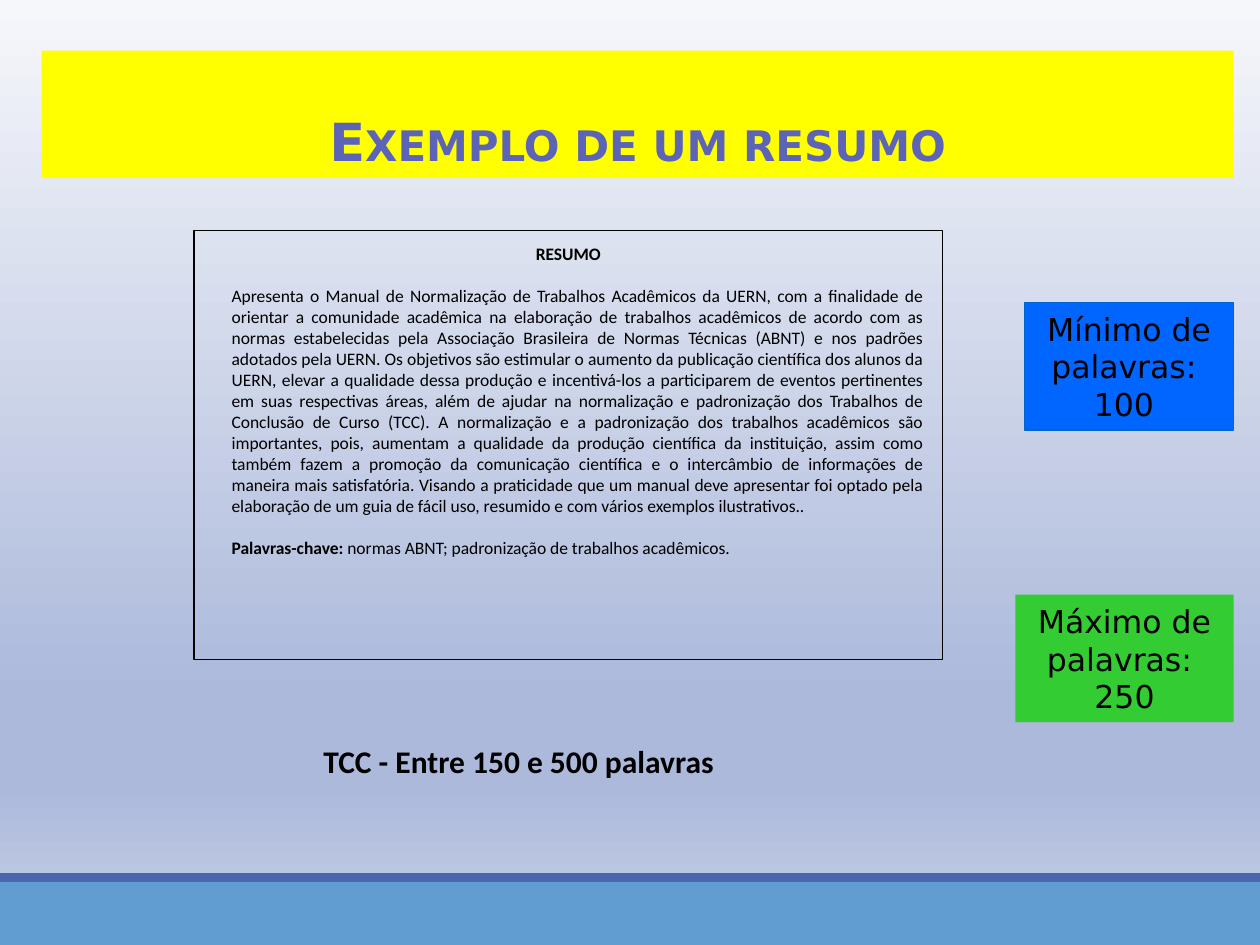
import copy
import pptx
import pptx.util
import pptx.dml.color
import pptx.enum.shapes
import pptx.enum.text

Cm = pptx.util.Cm
Pt = pptx.util.Pt
RGB = pptx.dml.color.RGBColor
ALIGN = pptx.enum.text.PP_ALIGN
ANCHOR = pptx.enum.text.MSO_ANCHOR

BLACK = RGB(0x00, 0x00, 0x00)
PURPLE = RGB(0x5C, 0x64, 0xB7)
YELLOW = RGB(0xFF, 0xFF, 0x00)
BLUE = RGB(0x00, 0x66, 0xFF)
EDGE = RGB(0x00, 0x66, 0xCC)
GREEN = RGB(0x33, 0xCC, 0x33)
SKY = RGB(0x62, 0x9D, 0xD1)
NAVY = RGB(0x4A, 0x66, 0xAC)
SHADES = [
    (0, RGB(0xF6, 0xF7, 0xFB)),
    (0.74, RGB(0xAC, 0xB9, 0xDB)),
    (0.83, RGB(0xAC, 0xB9, 0xDB)),
    (1, RGB(0xC8, 0xD1, 0xE7)),
]
SANS = "DejaVu Sans"
BODY = "Calibri"

TITLE = "Exemplo de um resumo"
HEAD = "RESUMO"
TEXT = [
    "Apresenta o Manual de Normalização de Trabalhos Acadêmicos da UERN, "
    "com a finalidade de orientar a comunidade acadêmica na elaboração de "
    "trabalhos acadêmicos de acordo com as normas estabelecidas pela "
    "Associação Brasileira de Normas Técnicas (ABNT) e nos padrões adotados "
    "pela UERN.",
    "Os objetivos são estimular o aumento da publicação científica "
    "dos alunos da UERN, elevar a qualidade dessa produção e incentivá-los a "
    "participarem de eventos pertinentes em suas respectivas áreas, além de "
    "ajudar na normalização e padronização dos Trabalhos de Conclusão de Curso "
    "(TCC).",
    "A normalização e a padronização dos trabalhos acadêmicos são "
    "importantes, pois, aumentam a qualidade da produção científica da "
    "instituição, assim como também fazem a promoção da comunicação científica "
    "e o intercâmbio de informações de maneira mais satisfatória.",
    "Visando a praticidade que um manual deve apresentar foi optado pela "
    "elaboração de um guia de fácil uso, resumido e com vários exemplos "
    "ilustrativos..",
]
KEYS = [("Palavras-chave: ", True),
        ("normas ABNT; padronização de trabalhos acadêmicos.", False)]
NOTE = "TCC - Entre 150 e 500 palavras"
LIMITS = [
    (["Mínimo de palavras: ", "100 "], 6.1, 4.22, BLUE, EDGE),
    (["Máximo de palavras: ", "250"], 11.99, 4.4, GREEN, None),
]
BARS = [(17.78, 1.27, SKY), (17.6, 0.18, NAVY)]
WIDTH, HEIGHT = 25.4, 19.05
RIGHT = 24.87


def place(shape, left, top, width, height):
    shape.left, shape.top = Cm(left), Cm(top)
    shape.width, shape.height = Cm(width), Cm(height)


def box(slide, left, top, width, height, fill=None, line=None):
    shape = slide.shapes.add_shape(
        pptx.enum.shapes.MSO_SHAPE.RECTANGLE,
        Cm(left), Cm(top), Cm(width), Cm(height))
    shape.shadow.inherit = False
    if fill is None:
        shape.fill.background()
    else:
        shape.fill.solid()
        shape.fill.fore_color.rgb = fill
    if line is None:
        shape.line.fill.background()
    else:
        shape.line.color.rgb = line
        shape.line.width = Pt(0.75)
    return shape


def write(para, text, size=18, font=BODY, color=BLACK, bold=False,
          align=ALIGN.LEFT, after=0, left=0, right=0, small=False):
    para.alignment = align
    para.space_after = Pt(after)
    props = para._p.get_or_add_pPr()
    props.set("marL", str(Cm(left)))
    props.set("marR", str(Cm(right)))
    run = para.add_run()
    run.text = text
    run.font.size = Pt(size)
    run.font.name = font
    run.font.bold = bold
    run.font.color.rgb = color
    if small:
        run.font._element.set("cap", "small")


def shade(slide):
    fill = slide.background.fill
    fill.gradient()
    fill.gradient_angle = 270
    stops = fill.gradient_stops[0]._gs.getparent()
    for _ in SHADES[2:]:
        stops.append(copy.deepcopy(stops[0]))
    for stop, (spot, color) in zip(fill.gradient_stops, SHADES):
        stop.position = spot
        stop.color.rgb = color


def main():
    deck = pptx.Presentation()
    deck.slide_width, deck.slide_height = Cm(WIDTH), Cm(HEIGHT)
    slide = deck.slides.add_slide(deck.slide_layouts[5])
    shade(slide)

    for top, height, color in BARS:
        box(slide, 0, top, WIDTH, height, fill=color)

    title = slide.shapes.title
    place(title, 0.84, 1.02, 24.03, 2.57)
    title.fill.solid()
    title.fill.fore_color.rgb = YELLOW
    title.text_frame.vertical_anchor = ANCHOR.BOTTOM
    write(title.text_frame.paragraphs[0], TITLE, size=30, font=SANS,
          color=PURPLE, bold=True, align=ALIGN.CENTER, small=True)

    for lines, top, width, fill, line in LIMITS:
        frame = box(slide, RIGHT - width, top, width, 2.57,
                    fill=fill, line=line).text_frame
        frame.add_paragraph()
        for para, text in zip(frame.paragraphs, lines):
            write(para, text, font=SANS, align=ALIGN.CENTER)

    frame = box(slide, 3.91, 4.65, 15.09, 8.64, line=BLACK).text_frame
    frame.vertical_anchor = ANCHOR.TOP
    frame.margin_left = frame.margin_right = Cm(0.25)
    frame.margin_top = frame.margin_bottom = Cm(0.25)
    write(frame.paragraphs[0], HEAD, size=10, bold=True,
          align=ALIGN.CENTER, after=12)
    for runs, after in [([(" ".join(TEXT), False)], 12), (KEYS, 0)]:
        para = frame.add_paragraph()
        for text, bold in runs:
            write(para, text, size=10, bold=bold, align=ALIGN.JUSTIFY,
                  after=after, left=0.51, right=0.15)

    note = slide.shapes.add_textbox(Cm(6.27), Cm(14.83), Cm(12.7), Cm(1.02))
    note.text_frame.word_wrap = True
    write(note.text_frame.paragraphs[0], NOTE, bold=True)

    deck.save("out.pptx")


if __name__ == "__main__":
    main()
